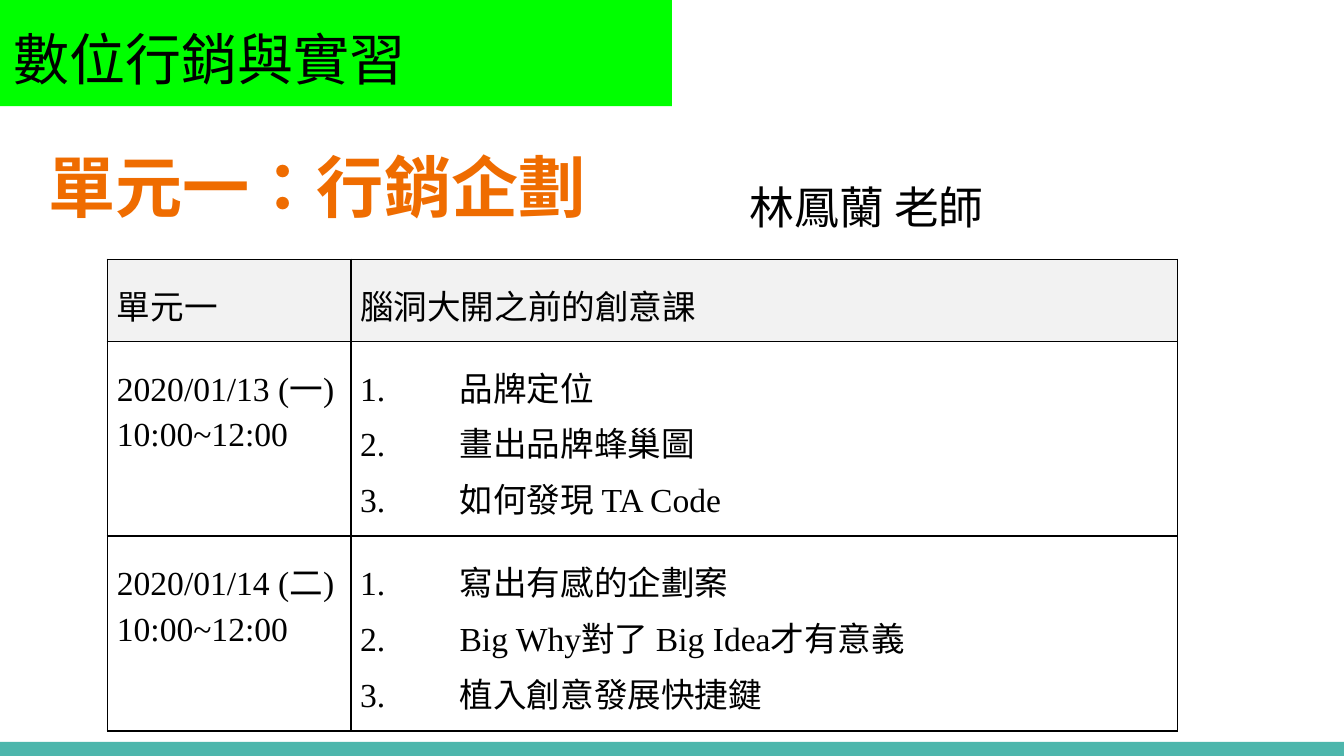
from dataclasses import dataclass

from lxml.etree import SubElement
from pptx import Presentation
from pptx.dml.color import RGBColor
from pptx.enum.shapes import MSO_SHAPE as Preset
from pptx.enum.text import MSO_ANCHOR as Anchor, PP_ALIGN as Align
from pptx.oxml.ns import qn
from pptx.util import Inches, Pt

BLACK = RGBColor(0x00, 0x00, 0x00)
WHITE = RGBColor(0xFF, 0xFF, 0xFF)
GREEN = RGBColor(0x00, 0xFF, 0x00)
TEAL = RGBColor(0x4D, 0xB6, 0xAC)
ORANGE = RGBColor(0xEF, 0x6C, 0x00)
GRAY = RGBColor(0xF2, 0xF2, 0xF2)
SANS, NARROW, SERIF = "Arial", "Arial Narrow", "Times New Roman"
LINE_SPACING = 1.15


@dataclass(frozen=True)
class Session:
    date: str
    weekday: str
    hours: str
    topics: tuple[str, ...]


SESSIONS = (
    Session("2020/01/13", "一", "10:00~12:00",
            ("品牌定位", "畫出品牌蜂巢圖", "如何發現 TA Code")),
    Session("2020/01/14", "二", "10:00~12:00",
            ("寫出有感的企劃案", "Big Why對了 Big Idea才有意義", "植入創意發展快捷鍵")),
)


def style_run(run, font: str, size: float, color: RGBColor = BLACK, bold: bool = False) -> None:
    run.font.name = font
    run.font.size = Pt(size)
    run.font.color.rgb = color
    run.font.bold = bold
    run._r.get_or_add_rPr().set("lang", "zh-TW")


def style_text(frame, font: str, size: float, color: RGBColor = BLACK, bold: bool = False) -> None:
    for paragraph in frame.paragraphs:
        for run in paragraph.runs:
            style_run(run, font, size, color, bold)


def set_margins(frame) -> None:
    frame.word_wrap = True
    frame.margin_left = frame.margin_right = Inches(0.1)
    frame.margin_top = frame.margin_bottom = Inches(0.1)


def add_band(slide, left: float, top: float, width: float, height: float, color: RGBColor):
    band = slide.shapes.add_shape(
        Preset.RECTANGLE, Inches(left), Inches(top), Inches(width), Inches(height))
    band.shadow.inherit = False
    band.fill.solid()
    band.fill.fore_color.rgb = color
    band.line.fill.background()
    return band


def add_label(slide, left: float, top: float, width: float, height: float, text: str,
              font: str, size: float, color: RGBColor = BLACK, bold: bool = False) -> None:
    label = slide.shapes.add_textbox(Inches(left), Inches(top), Inches(width), Inches(height))
    set_margins(label.text_frame)
    label.text_frame.text = text
    style_text(label.text_frame, font, size, color, bold)


def style_cell(cell, fill: RGBColor) -> None:
    cell.margin_left = cell.margin_right = Inches(0.07)
    cell.margin_top = cell.margin_bottom = Inches(0.1)
    properties = cell._tc.get_or_add_tcPr()
    for side in ("a:lnL", "a:lnR", "a:lnT", "a:lnB"):
        border = SubElement(properties, qn(side), w=str(Pt(1)))
        paint = SubElement(border, qn("a:solidFill"))
        SubElement(paint, qn("a:srgbClr"), val=str(BLACK))
    cell.fill.solid()
    cell.fill.fore_color.rgb = fill
    for paragraph in cell.text_frame.paragraphs:
        paragraph.line_spacing = LINE_SPACING


def write_time(cell, session: Session) -> None:
    frame = cell.text_frame
    day = frame.paragraphs[0]
    for text, font in ((f"{session.date} (", SERIF), (session.weekday, SANS), (")", SERIF)):
        run = day.add_run()
        run.text = text
        style_run(run, font, 18)
    hours = frame.add_paragraph()
    hours.text = session.hours
    style_run(hours.runs[0], SERIF, 18)


def write_topics(cell, topics: tuple[str, ...]) -> None:
    frame = cell.text_frame
    frame.text = "\n".join(f"{number}.\t{topic}" for number, topic in enumerate(topics, 1))
    style_text(frame, SERIF, 18)
    for paragraph in frame.paragraphs:
        properties = paragraph._p.get_or_add_pPr()
        properties.set("marL", str(Inches(0.74)))
        properties.set("indent", str(-Inches(0.74)))


def add_schedule(slide) -> None:
    widths, heights = (1.81, 6.15), (0.61, 1.45, 1.45)
    schedule = slide.shapes.add_table(
        len(heights), len(widths), Inches(0.8), Inches(1.93),
        Inches(sum(widths)), Inches(sum(heights))).table
    schedule.first_row = schedule.horz_banding = False
    for column, width in zip(schedule.columns, widths):
        column.width = Inches(width)
    for row, height in zip(schedule.rows, heights):
        row.height = Inches(height)
    for column, heading in enumerate(("單元一", "腦洞大開之前的創意課")):
        cell = schedule.cell(0, column)
        cell.text_frame.text = heading
        style_text(cell.text_frame, SANS, 18)
        style_cell(cell, GRAY)
    for row, session in enumerate(SESSIONS, 1):
        time, topics = schedule.cell(row, 0), schedule.cell(row, 1)
        write_time(time, session)
        write_topics(topics, session.topics)
        style_cell(time, WHITE)
        style_cell(topics, WHITE)


def add_course(slide) -> None:
    course = add_band(slide, 0, 0, 5, 0.79, GREEN).text_frame
    set_margins(course)
    course.vertical_anchor = Anchor.MIDDLE
    course.text = "數位行銷與實習"
    style_text(course, SERIF, 30)
    name = course.paragraphs[0]
    name.alignment = Align.LEFT
    name.line_spacing = LINE_SPACING
    name.space_before = name.space_after = Pt(9)


def main() -> None:
    deck = Presentation()
    deck.slide_width, deck.slide_height = Inches(10), Inches(10 * 9 / 16)
    slide = deck.slides.add_slide(deck.slide_layouts[6])
    add_band(slide, 0, 5.52, 10, 0.11, TEAL)
    add_label(slide, 0.26, 0.98, 9.32, 0.77, "單元一：行銷企劃", NARROW, 36, ORANGE, True)
    add_schedule(slide)
    add_course(slide)
    add_label(slide, 5.48, 1.24, 3.28, 3.28, "林鳳蘭 老師", SERIF, 24)
    deck.save("out.pptx")


if __name__ == "__main__":
    main()
